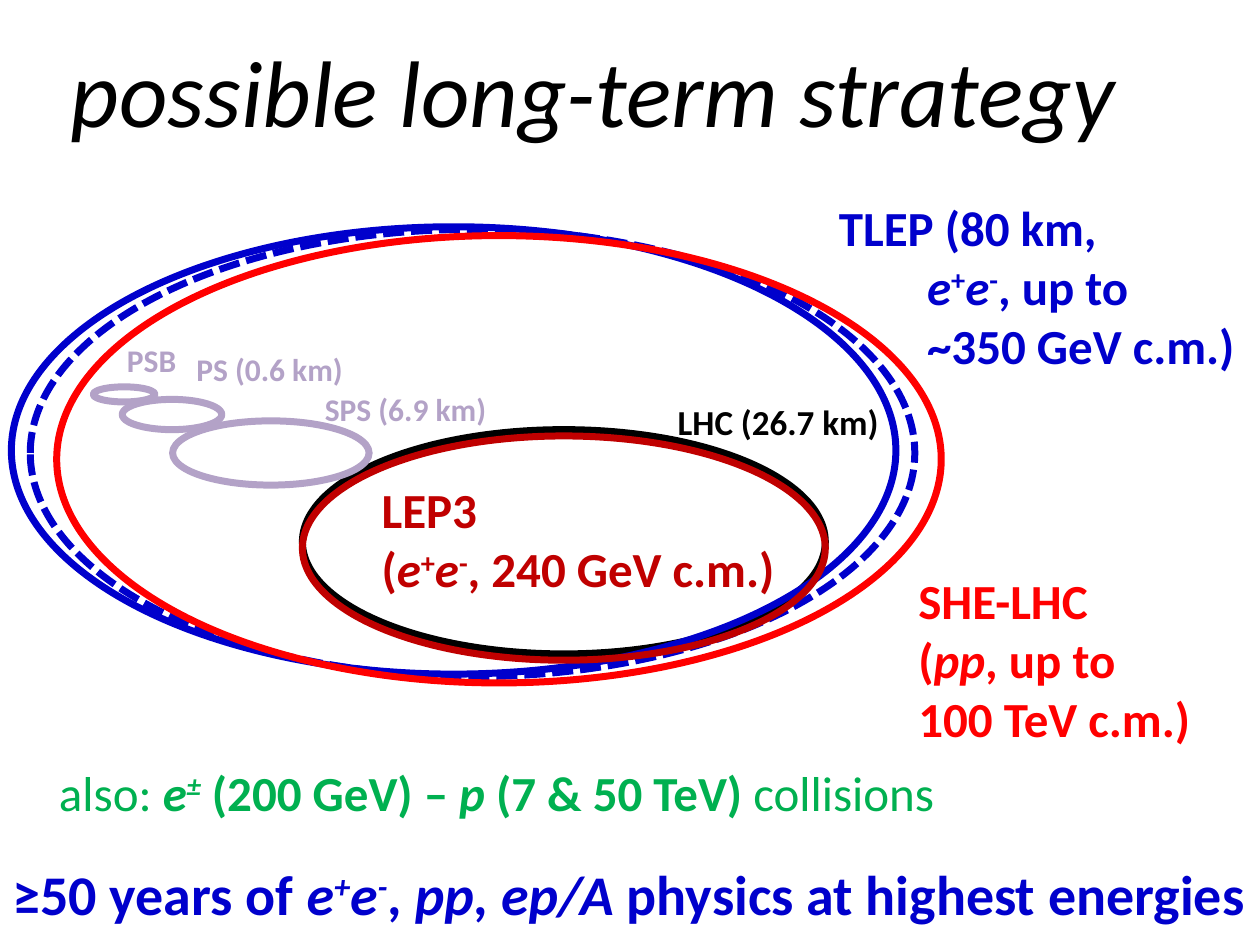
from pptx import Presentation
from pptx import util as u
from pptx.dml.color import RGBColor
from pptx.enum import dml, shapes, text

BLACK = RGBColor(0x00, 0x00, 0x00)
LILAC = RGBColor(0xB3, 0xA2, 0xC7)
BLUE = RGBColor(0x00, 0x00, 0xCC)
RED = RGBColor(0xFF, 0x00, 0x00)
DARK_RED = RGBColor(0xC0, 0x00, 0x00)
GREEN = RGBColor(0x00, 0xB0, 0x50)

FONT = "Calibri"
W, H = 10, 7.5
LHC_SIZE = (4.15, 1.78)
TUNNEL_SIZE = (7.02, 3.55)  # 80 km tunnel

# Rings, back to front: left, top, size, colour, dashed
RINGS = [
    (2.4, 3.41, LHC_SIZE, BLACK, False),
    (1.37, 3.34, (1.56, 0.51), LILAC, False),    # SPS
    (0.97, 3.17, (0.79, 0.24), LILAC, False),    # PS
    (0.74, 3.07, (0.49, 0.12), LILAC, False),    # PSB
    (0.09, 1.8, TUNNEL_SIZE, BLUE, False),
    (0.24, 1.82, TUNNEL_SIZE, BLUE, True),
    (0.45, 1.87, TUNNEL_SIZE, RED, False),
    (2.4, 3.46, LHC_SIZE, DARK_RED, False),      # LEP3
]

# Runs are (text, style): b bold, i italic, ^ superscript
EE = [("e", "bi"), ("+", "b^"), ("e", "bi"), ("-", "b^")]
EE_SLANTED = [("e", "bi"), ("+", "bi^"), ("e", "bi"), ("-", "bi^")]

TITLE = ((0.46, 0.21, 8.57, 1.01), 54, BLACK,
         [(0, [("possible long-term strategy", "i")])])

# Labels: box, size, colour, paragraphs as (indent, runs)
LABELS = [
    ((0.91, 2.66, 0.6, 0.4), 18, LILAC, [(0, [("PSB", "b")])]),
    ((1.46, 2.73, 1.38, 0.4), 18, LILAC, [(0, [("PS (0.6 km)", "b")])]),
    ((2.48, 3.05, 1.5, 0.4), 18, LILAC, [(0, [("SPS (6.9 km)", "b")])]),
    ((5.28, 3.13, 1.81, 0.44), 20, BLACK, [(0, [("LHC (26.7 km)", "b")])]),
    ((6.56, 1.52, 3.39, 1.51), 28, BLUE, [
        (0, [("TLEP (80 km,", "b")]),
        (0.7, EE + [(", up to", "b")]),
        (0.7, [("~350 GeV c.m.)", "b")])]),
    ((7.19, 4.48, 2.39, 1.51), 28, RED, [
        (0, [("SHE-LHC", "b")]),
        (0, [("(", "b"), ("pp", "bi"), (", up to", "b")]),
        (0, [("100 TeV c.m.)", "b")])]),
    ((0.37, 6, 7.34, 0.57), 28, GREEN, [
        (0, [("also: ", ""), ("e", "bi"), ("±", "bi^"),
             (" (200 GeV) – ", "b"), ("p", "bi"),
             (" (7 & 50 TeV) ", "b"), ("collisions", "")])]),
    ((2.93, 3.76, 3.39, 1.04), 28, DARK_RED, [
        (0, [("LEP3", "b")]),
        (0, [("(", "b")] + EE + [(", 240 GeV c.m.)", "b")])]),
    ((0, 6.77, 10.08, 0.64), 32, BLUE, [
        (0, [("≥50 years of ", "b")] + EE_SLANTED
         + [(", ", "b"), ("pp", "bi"), (", ", "b"), ("ep/A", "bi"),
            (" physics at highest energies", "b")])]),
]


def add_ring(s, left, top, size, color, dashed):
    sp = s.shapes.add_shape(shapes.MSO_SHAPE.OVAL,
                            *map(u.Inches, (left, top, *size)))
    sp.shadow.inherit = False
    sp.fill.background()
    sp.line.color.rgb = color
    sp.line.width = u.Pt(4)
    if dashed:
        sp.line.dash_style = dml.MSO_LINE.SQUARE_DOT


def write(sp, box, size, color, paragraphs):
    sp.left, sp.top, sp.width, sp.height = map(u.Inches, box)
    tf = sp.text_frame
    tf.word_wrap = False
    tf.auto_size = text.MSO_AUTO_SIZE.SHAPE_TO_FIT_TEXT
    tf.vertical_anchor = text.MSO_ANCHOR.TOP
    for i, (indent, runs) in enumerate(paragraphs):
        p = tf.add_paragraph() if i else tf.paragraphs[0]
        p.alignment = text.PP_ALIGN.LEFT
        if indent:
            p._p.get_or_add_pPr().set("marL", str(u.Inches(indent)))
        for words, style in runs:
            r = p.add_run()
            r.text = words
            f = r.font
            f.name, f.size = FONT, u.Pt(size)
            f.color.rgb = color
            f.bold, f.italic = "b" in style, "i" in style
            if "^" in style:
                r._r.get_or_add_rPr().set("baseline", "30000")


def main():
    prs = Presentation()
    prs.slide_width, prs.slide_height = u.Inches(W), u.Inches(H)
    s = prs.slides.add_slide(prs.slide_layouts[5])

    # Title
    write(s.shapes.title, *TITLE)

    # Accelerator rings
    for ring in RINGS:
        add_ring(s, *ring)

    # Ring labels and conclusions
    for box, *content in LABELS:
        sp = s.shapes.add_textbox(*map(u.Inches, box))
        write(sp, box, *content)

    prs.save("out.pptx")


if __name__ == "__main__":
    main()
